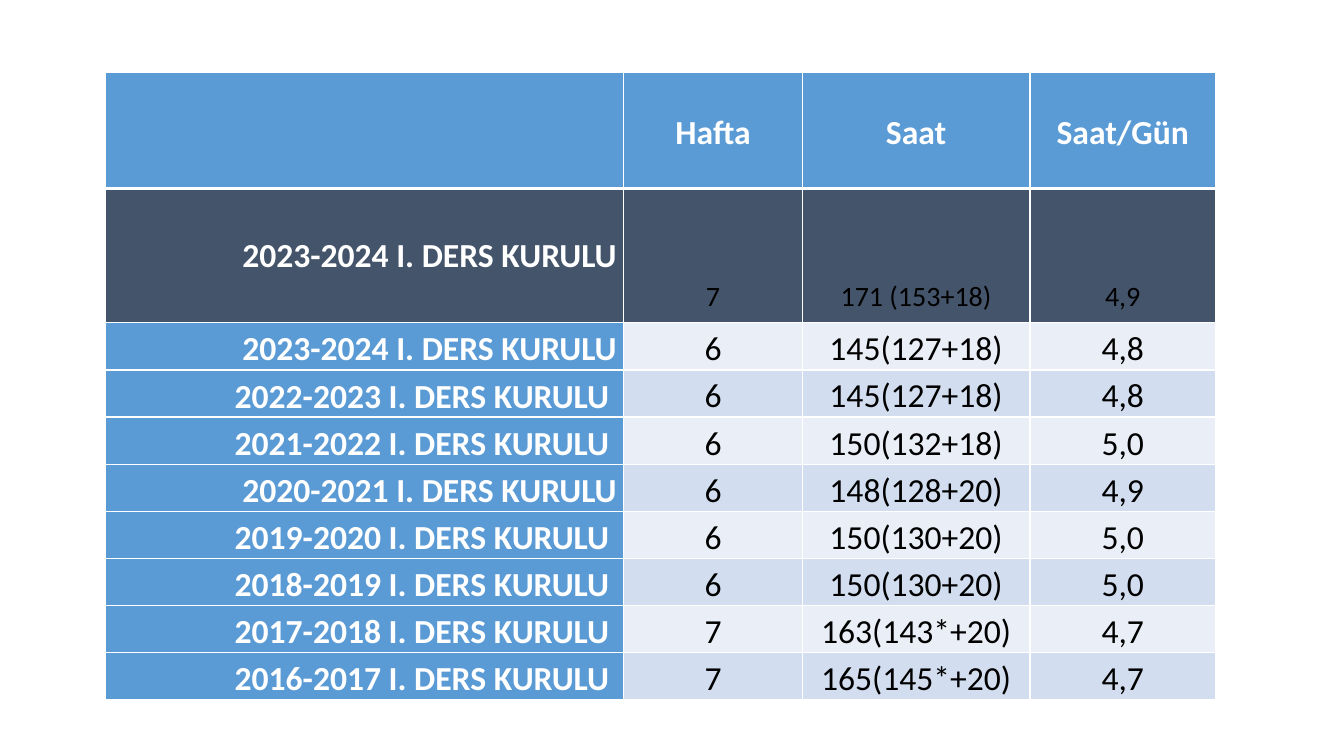
from lxml import etree
from pptx import Presentation
from pptx.dml.color import RGBColor
from pptx.enum.text import MSO_ANCHOR as Anchor, PP_ALIGN as Align
from pptx.oxml.ns import qn
from pptx.util import Pt

COLORS = {
    "header": "5B9BD5",
    "highlight": "44546A",
    "band_light": "EAEFF7",
    "band_dark": "D2DEEF",
    "white": "FFFFFF",
    "black": "000000",
}
FONT = "Calibri"
HEADINGS = ["", "Hafta", "Saat", "Saat/Gün"]
COMMITTEES = [
    ("2023-2024 I. DERS KURULU", "7", "171 (153+18)", "4,9"),
    ("2023-2024 I. DERS KURULU", "6", "145(127+18)", "4,8"),
    ("2022-2023 I. DERS KURULU ", "6", "145(127+18)", "4,8"),
    ("2021-2022 I. DERS KURULU ", "6", "150(132+18)", "5,0"),
    ("2020-2021 I. DERS KURULU", "6", "148(128+20)", "4,9"),
    ("2019-2020 I. DERS KURULU ", "6", "150(130+20)", "5,0"),
    ("2018-2019 I. DERS KURULU ", "6", "150(130+20)", "5,0"),
    ("2017-2018 I. DERS KURULU ", "7", "163(143*+20)", "4,7"),
    ("2016-2017 I. DERS KURULU ", "7", "165(145*+20)", "4,7"),
]
COLUMN_WIDTHS = [370, 127.5, 162.7, 132.5]
HEADER_HEIGHT, HIGHLIGHT_HEIGHT = 82.8, 96
HIGHLIGHT_ROW = 1


def set_borders(cell, bottom_width):
    """Draw white cell borders, 1 pt except at the bottom."""
    properties = cell._tc.get_or_add_tcPr()
    widths = {"a:lnL": 1, "a:lnR": 1, "a:lnT": 1, "a:lnB": bottom_width}
    for position, (tag, width) in enumerate(widths.items()):
        line = etree.Element(qn(tag), w=str(Pt(width)))
        fill = etree.SubElement(line, qn("a:solidFill"))
        etree.SubElement(fill, qn("a:srgbClr"), val=COLORS["white"])
        properties.insert(position, line)


def cell_fill(row, column):
    if row == HIGHLIGHT_ROW:
        return "highlight"
    if row == 0 or column == 0:
        return "header"
    return "band_dark" if row % 2 else "band_light"


def format_cell(cell, row, column, text):
    is_title = row == 0 or column == 0
    is_highlight = row == HIGHLIGHT_ROW
    cell.fill.solid()
    cell.fill.fore_color.rgb = RGBColor.from_string(COLORS[cell_fill(row, column)])
    set_borders(cell, 3 if row == 0 else 1)

    cell.margin_left = cell.margin_right = Pt(5)
    cell.margin_top = cell.margin_bottom = 0
    if is_title:
        cell.vertical_anchor = Anchor.MIDDLE
    else:
        cell.vertical_anchor = Anchor.BOTTOM if is_highlight else Anchor.TOP
    if is_highlight:
        cell.margin_bottom = Pt(4 if is_title else 6)

    cell.text = text
    paragraph = cell.text_frame.paragraphs[0]
    paragraph.alignment = Align.RIGHT if column == 0 else Align.CENTER
    paragraph.line_spacing = 1.15
    font = paragraph.font
    font.name = FONT
    font.size = Pt(20 if is_highlight and not is_title else 24)
    font.bold = is_title
    font.color.rgb = RGBColor.from_string(COLORS["white" if is_title else "black"])


def add_committee_table(slide, left, top, width, height):
    rows = [HEADINGS, *COMMITTEES]
    shape = slide.shapes.add_table(
        len(rows), len(HEADINGS), Pt(left), Pt(top), Pt(width), Pt(height)
    )
    table = shape.table
    table.first_col = True
    table.horz_banding = False

    for column, share in zip(table.columns, COLUMN_WIDTHS):
        column.width = Pt(width * share / sum(COLUMN_WIDTHS))
    year_height = (height - HEADER_HEIGHT - HIGHLIGHT_HEIGHT) / (len(rows) - 2)
    heights = [HEADER_HEIGHT, HIGHLIGHT_HEIGHT] + [year_height] * (len(rows) - 2)
    for table_row, row_height in zip(table.rows, heights):
        table_row.height = Pt(row_height)

    for row, texts in enumerate(rows):
        for column, text in enumerate(texts):
            format_cell(table.cell(row, column), row, column, text)


def main():
    presentation = Presentation()
    presentation.slide_width = Pt(960)
    presentation.slide_height = Pt(540)
    slide = presentation.slides.add_slide(presentation.slide_layouts[6])
    add_committee_table(slide, 75.6, 51.8, 792.7, 447.6)
    presentation.save("out.pptx")


if __name__ == "__main__":
    main()
